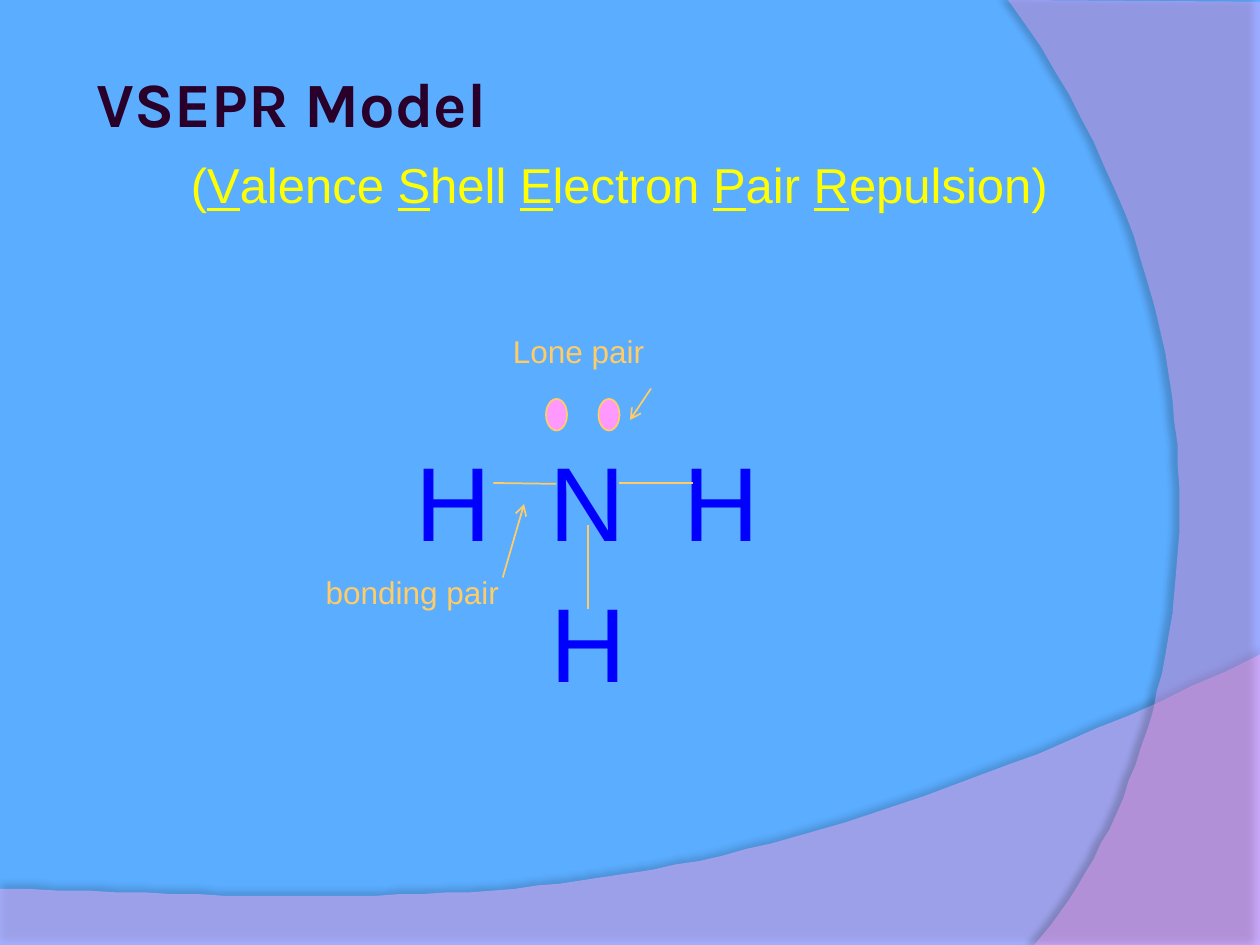
from lxml.etree import SubElement
from pptx import Presentation
from pptx.dml.color import RGBColor
from pptx.enum.shapes import MSO_CONNECTOR, MSO_SHAPE
from pptx.enum.text import MSO_ANCHOR, PP_ALIGN
from pptx.oxml.ns import qn
from pptx.util import Pt

GOLD, PINK, BLUE, YELLOW = "FFCC66", "FF99FF", "0000FF", "FFFF00"


def rgb(value):
    return RGBColor.from_string(value)


def add(parent, tag, **attrs):
    return SubElement(parent, qn(tag), {k: str(v) for k, v in attrs.items()})


def format_run(r, color, **values):
    r.font.color.rgb = rgb(color)
    for name, value in values.items():
        setattr(r.font, name, value)


def curve(p0, p1, p2, p3, steps=48):
    """Points along a cubic Bezier, without its start."""
    for i in range(1, steps + 1):
        t = i / steps
        u = 1 - t
        yield tuple(u**3 * a + 3 * u * u * t * b + 3 * u * t * t * c + t**3 * d
                    for a, b, c, d in zip(p0, p1, p2, p3))


def swoosh(s, points, color, alpha, shade, distance, angle):
    """Translucent background outline with a soft shadow."""
    fb = s.shapes.build_freeform(*points[0], scale=Pt(1))
    fb.add_line_segments(points[1:], close=True)
    sp = fb.convert_to_shape()
    sp.fill.solid()
    sp.fill.fore_color.rgb = rgb(color)
    sp.line.fill.background()
    pr = sp.fill._xPr
    add(pr.find(".//" + qn("a:srgbClr")), "a:alpha", val=alpha * 1000)
    shadow = add(add(pr, "a:effectLst"), "a:outerShdw", blurRad=Pt(4),
                 dist=Pt(distance), dir=angle * 60000, algn="ctr", rotWithShape=0)
    add(add(shadow, "a:srgbClr", val="000000"), "a:alpha", val=shade * 1000)


def background(s, width, height):
    s.background.fill.solid()
    s.background.fill.fore_color.rgb = rgb("5BADFF")
    wave = [(0, 507.6), (0, height), (width, height), (width, 374.4),
            *curve((width, 374.4), (402.5, 524.9), (281.5, 517.7), (0, 507.6))]
    swoosh(s, wave, "FFB4FF", 45, 35, 3.5, 270)
    arc = [(width, 1.4), (width, height), (591, height),
           *curve((591, height), (673.2, 445.7), (733, 216), (576, 0))]
    swoosh(s, arc, "FFA7FF", 40, 45, 4, 180)


def title(s, text, box):
    sp = s.shapes.title
    sp.left, sp.top, sp.width, sp.height = map(Pt, box)
    tf = sp.text_frame
    tf.vertical_anchor = MSO_ANCHOR.MIDDLE
    p = tf.paragraphs[0]
    p.alignment = PP_ALIGN.LEFT
    r = p.add_run()
    r.text = text
    format_run(r, "290029", name="Karla", size=Pt(36), bold=True)


def text_box(s, lines, box, size, color, align=PP_ALIGN.LEFT, gap=0):
    """Each line is a list of (text, underlined) runs."""
    tf = s.shapes.add_textbox(*map(Pt, box)).text_frame
    tf.word_wrap = True
    for i, runs in enumerate(lines):
        p = tf.add_paragraph() if i else tf.paragraphs[0]
        p.alignment = align
        if i:
            p.space_before = Pt(gap)
        for text, underline in runs:
            r = p.add_run()
            r.text = text
            format_run(r, color, name="Arial", size=Pt(size), underline=underline)


def subtitle(s, words, box):
    """Words with their initials underlined, in brackets."""
    runs = [("(", False)]
    for i, word in enumerate(words):
        end = ")" if i == len(words) - 1 else " "
        runs += [(word[0], True), (word[1:] + end, False)]
    text_box(s, [runs], box, 28, YELLOW)


def line(s, start, end, arrow=False):
    c = s.shapes.add_connector(MSO_CONNECTOR.STRAIGHT, *map(Pt, start + end))
    c.line.color.rgb = rgb(GOLD)
    c.line.width = Pt(1)
    if arrow:
        add(c.line._get_or_add_ln(), "a:tailEnd", type="arrow")
    add(c._element.spPr, "a:effectLst")


def electron(s, x, y):
    sp = s.shapes.add_shape(MSO_SHAPE.OVAL, Pt(x), Pt(y), Pt(12), Pt(18))
    sp.shadow.inherit = False
    sp.fill.solid()
    sp.fill.fore_color.rgb = rgb(PINK)
    sp.line.color.rgb = rgb(GOLD)
    sp.line.width = Pt(1)


def ammonia(s, x, y):
    """Molecule and its labels; x, y is the middle of the nitrogen atom."""
    text_box(s, [[("H  N  H", False)], [("H", False)]],
             (x - 186, y - 36, 372, 154), 60, BLUE, PP_ALIGN.CENTER, 8.7)
    for start, end in [((-54, -6), (-18, -5.5)), ((18, -6), (60, -6)),
                       ((0, 66), (0, 18))]:
        line(s, (x + start[0], y + start[1]), (x + end[0], y + end[1]))
    for dx in (-24, 6):
        electron(s, x + dx, y - 54)
    for label, dx, dy, width, start, end in [
            ("Lone pair", -50, -96, 122, (36, -60), (24, -42)),
            ("bonding pair", -157, 42, 156, (-48.7, 48), (-36.5, 6))]:
        text_box(s, [[(label, False)]], (x + dx, y + dy, width, 37), 18, GOLD)
        line(s, (x + start[0], y + start[1]), (x + end[0], y + end[1]), arrow=True)


def main():
    prs = Presentation()
    prs.slide_width, prs.slide_height = Pt(720), Pt(540)
    s = prs.slides.add_slide(prs.slide_layouts[5])
    background(s, 720, 540)
    title(s, "VSEPR Model", (48, 18, 612, 81))
    subtitle(s, ["Valence", "Shell", "Electron", "Pair", "Repulsion"],
             (102, 85, 508, 41))
    ammonia(s, 336, 282)
    prs.save("out.pptx")


if __name__ == "__main__":
    main()
